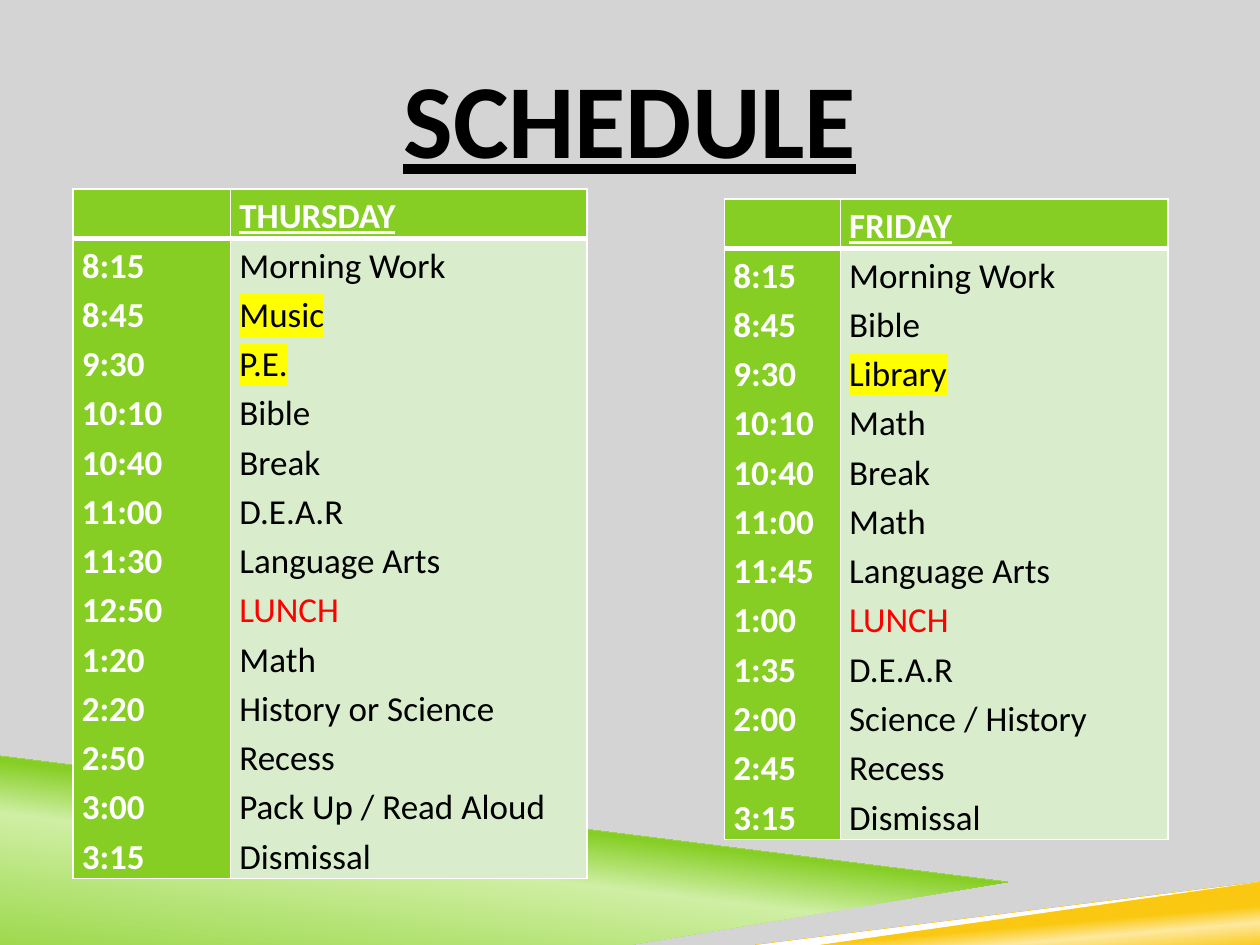
from dataclasses import dataclass

from pptx import Presentation
from pptx.dml.color import RGBColor
from pptx.enum.text import MSO_ANCHOR as Anchor, PP_ALIGN as Align
from pptx.oxml import parse_xml
from pptx.oxml.ns import nsdecls
from pptx.util import Inches, Pt


@dataclass(frozen=True)
class Theme:
    font: str = "Calibri"
    title_size: int = 60
    table_size: int = 20
    line_spacing: float = 1.15
    row_height: float = 0.39
    background: str = "D4D4D4"
    green: str = "86CE24"
    light_green: str = "CFEFA4"
    pale_green: str = "D9EDCD"
    gold: str = "FAC810"
    light_gold: str = "FDE99F"
    white: str = "FFFFFF"
    black: str = "000000"
    red: str = "FF0000"
    yellow: str = "FFFF00"


THEME = Theme()

THURSDAY = [
    ("8:15", "Morning Work"), ("8:45", "Music"), ("9:30", "P.E."),
    ("10:10", "Bible"), ("10:40", "Break"), ("11:00", "D.E.A.R"),
    ("11:30", "Language Arts"), ("12:50", "LUNCH"), ("1:20", "Math"),
    ("2:20", "History or Science"), ("2:50", "Recess"),
    ("3:00", "Pack Up / Read Aloud"), ("3:15", "Dismissal"),
]
FRIDAY = [
    ("8:15", "Morning Work"), ("8:45", "Bible"), ("9:30", "Library"),
    ("10:10", "Math"), ("10:40", "Break"), ("11:00", "Math"),
    ("11:45", "Language Arts"), ("1:00", "LUNCH"), ("1:35", "D.E.A.R"),
    ("2:00", "Science / History"), ("2:45", "Recess"), ("3:15", "Dismissal"),
]
SPECIALS = {"Music", "P.E.", "Library"}


def style_font(font, size, color, bold=False, underline=False):
    font.name = THEME.font
    font.size = Pt(size)
    font.bold = bold
    font.underline = underline
    font.color.rgb = RGBColor.from_string(color)


def set_background(slide):
    fill = slide.background.fill
    fill.solid()
    fill.fore_color.rgb = RGBColor.from_string(THEME.background)


def add_polygon(slide, points):
    start, *others = points
    builder = slide.shapes.build_freeform(*start, scale=Inches(1))
    builder.add_line_segments(others, close=True)
    shape = builder.convert_to_shape()
    shape.shadow.inherit = False
    shape.line.fill.background()
    return shape


def add_solid_band(slide, points):
    fill = add_polygon(slide, points).fill
    fill.solid()
    fill.fore_color.rgb = RGBColor.from_string(THEME.white)


def add_gradient_wedge(slide, points, stops, angle):
    shape = add_polygon(slide, points)
    stop_xml = "".join(
        f'<a:gs pos="{position * 1000}"><a:srgbClr val="{color}"/></a:gs>'
        for position, color in stops
    )
    gradient = parse_xml(
        f'<a:gradFill {nsdecls("a")} rotWithShape="1"><a:gsLst>{stop_xml}</a:gsLst>'
        f'<a:lin ang="{angle * 60000}" scaled="0"/></a:gradFill>'
    )
    shape.element.spPr.find(".//{*}custGeom").addnext(gradient)


def add_title(slide, text):
    title = slide.shapes.title
    title.left, title.top = Inches(0.75), Inches(0.3)
    title.width, title.height = Inches(8.5), Inches(1.25)
    frame = title.text_frame
    frame.margin_left = frame.margin_right = 0
    frame.vertical_anchor = Anchor.MIDDLE
    frame.text = text
    paragraph = frame.paragraphs[0]
    paragraph.alignment = Align.CENTER
    style_font(paragraph.font, THEME.title_size, THEME.black, True, True)


def highlight(run):
    run.font._element.append(parse_xml(
        f'<a:highlight {nsdecls("a")}><a:srgbClr val="{THEME.yellow}"/></a:highlight>'
    ))


def set_borders(cell, top, bottom):
    properties = cell._tc.get_or_add_tcPr()
    for side, width in (("L", 1), ("R", 1), ("T", top), ("B", bottom)):
        properties.append(parse_xml(
            f'<a:ln{side} {nsdecls("a")} w="{Pt(width)}"><a:solidFill>'
            f'<a:srgbClr val="{THEME.white}"/></a:solidFill></a:ln{side}>'
        ))


def fill_cell(cell, lines, fill, color, bold=False, underline=False):
    cell.margin_left = cell.margin_right = Inches(0.07)
    cell.margin_top = cell.margin_bottom = 0
    cell.fill.solid()
    cell.fill.fore_color.rgb = RGBColor.from_string(fill)
    frame = cell.text_frame
    frame.text = "\n".join(lines)
    for paragraph, line in zip(frame.paragraphs, lines):
        paragraph.line_spacing = THEME.line_spacing
        text_color = THEME.red if line == "LUNCH" else color
        style_font(paragraph.font, THEME.table_size, text_color, bold, underline)
        if line in SPECIALS:
            highlight(paragraph.runs[0])


def add_schedule(slide, day, entries, left, top, column_widths):
    heights = [THEME.row_height, THEME.row_height * len(entries)]
    table = slide.shapes.add_table(
        2, 2, Inches(left), Inches(top),
        Inches(sum(column_widths)), Inches(sum(heights)),
    ).table
    table.first_row = table.horz_banding = False
    for column, width in zip(table.columns, column_widths):
        column.width = Inches(width)
    for row, height in zip(table.rows, heights):
        row.height = Inches(height)
    for index in range(2):
        set_borders(table.cell(0, index), 1, 3)
        set_borders(table.cell(1, index), 3, 1)
    times, subjects = zip(*entries)
    fill_cell(table.cell(0, 0), [""], THEME.green, THEME.white)
    fill_cell(table.cell(0, 1), [day], THEME.green, THEME.white, True, True)
    fill_cell(table.cell(1, 0), times, THEME.green, THEME.white, True)
    fill_cell(table.cell(1, 1), subjects, THEME.pale_green, THEME.black)


def add_decoration(slide):
    add_gradient_wedge(
        slide, [(0, 5.97), (7.92, 6.92), (2, 7.5), (0, 7.5)],
        [(0, THEME.green), (52, THEME.light_green), (66, THEME.green)], 277,
    )
    add_gradient_wedge(
        slide, [(1.98, 7.5), (10, 6.72), (10, 7.5)],
        [(28, THEME.gold), (40, THEME.light_gold), (48, THEME.gold)], 265,
    )
    add_solid_band(slide, [(0, 5.92), (0, 6), (7.9, 6.93), (8.32, 6.9)])
    add_solid_band(slide, [(10, 6.69), (1.84, 7.5), (2.66, 7.5), (10, 6.77)])


def main():
    presentation = Presentation()
    presentation.slide_width, presentation.slide_height = Inches(10), Inches(7.5)
    slide = presentation.slides.add_slide(presentation.slide_layouts[5])
    set_background(slide)
    add_decoration(slide)
    add_title(slide, "SCHEDULE")
    add_schedule(slide, "THURSDAY", THURSDAY, 0.58, 1.5, (1.25, 2.83))
    add_schedule(slide, "FRIDAY", FRIDAY, 5.75, 1.58, (0.92, 2.6))
    presentation.save("out.pptx")


if __name__ == "__main__":
    main()
